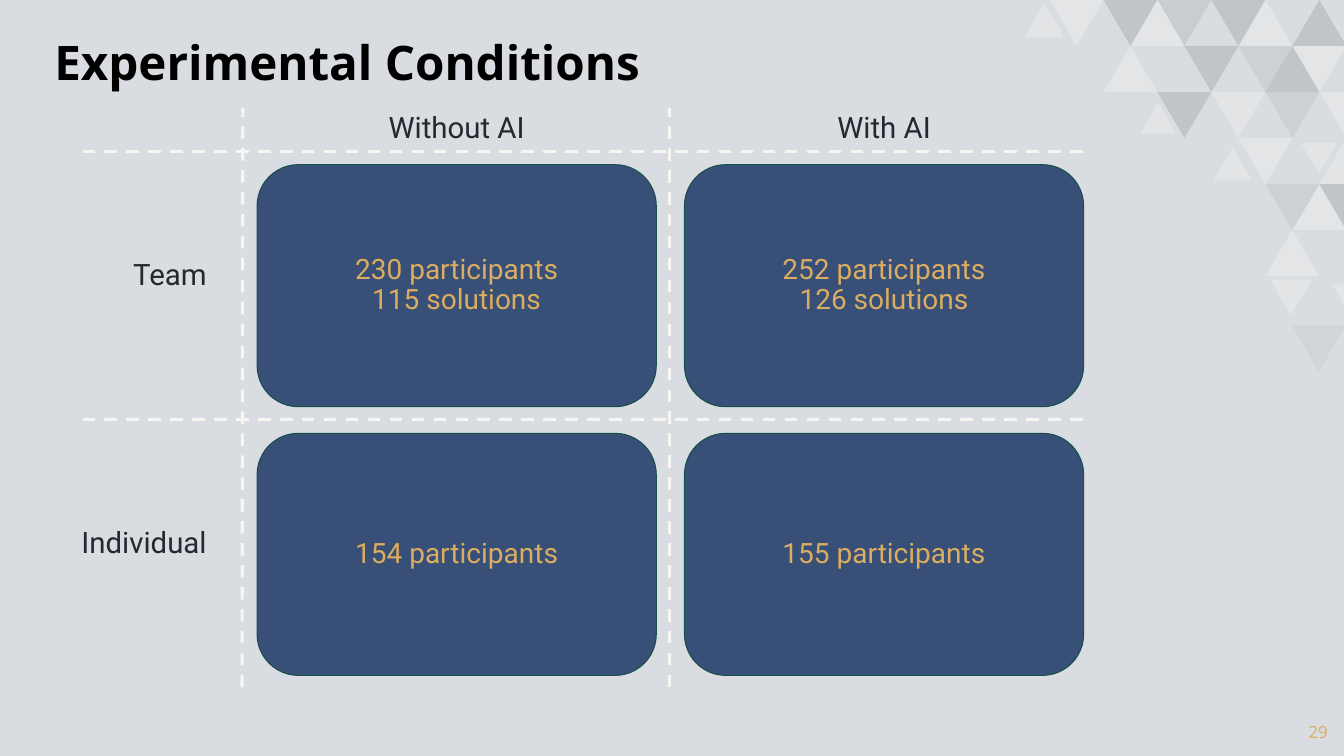
import pptx
import pptx.dml.color
import pptx.enum.dml
import pptx.enum.shapes
import pptx.enum.text
import pptx.oxml
import pptx.oxml.ns
import pptx.util

Cm = pptx.util.Cm
Align = pptx.enum.text.PP_ALIGN
Anchor = pptx.enum.text.MSO_ANCHOR


def color(value):
    return pptx.dml.color.RGBColor.from_string(value)


def write(shape, text, size, ink, align, font="Roboto", anchor=Anchor.TOP,
          spacing=0.9, left=0.25, side=0.25, edge=0.13):
    frame = shape.text_frame
    frame.word_wrap = True
    frame.vertical_anchor = anchor
    frame.margin_left, frame.margin_right = Cm(left), Cm(side)
    frame.margin_top = frame.margin_bottom = Cm(edge)
    frame.text = text
    for para in frame.paragraphs:
        para.alignment = align
        para.line_spacing = spacing
        para.font.name = font
        para.font.size = pptx.util.Pt(size)
        para.font.color.rgb = color(ink)


deck = pptx.Presentation()
deck.slide_width, deck.slide_height = Cm(33.87), Cm(19.05)
page = deck.slides.add_slide(deck.slide_layouts[6])
page.background.fill.solid()
page.background.fill.fore_color.rgb = color("D9DCE0")

PALE, DARK, SLATE = "F7F6F3", "303F48", "49636F"
GRID_LEFT, HALF, ROW = 26.45, 0.68, 1.16
grid_triangles = [
    (7, 1, "down", SLATE, 9), (7, 0, "up", PALE, 36), (5, 1, "down", DARK, 14),
    (6, 0, "down", DARK, 14), (4, 0, "down", DARK, 9), (2, 0, "down", DARK, 14),
    (0, 0, "down", PALE, 36), (3, 0, "up", PALE, 36), (10, 2, "down", PALE, 36),
    (9, 1, "down", PALE, 36), (9, 0, "up", DARK, 14), (8, 1, "up", DARK, 14),
    (9, 4, "up", PALE, 36), (8, 5, "up", PALE, 36), (10, 4, "down", DARK, 14),
    (8, 4, "down", SLATE, 9), (10, 3, "up", PALE, 32), (7, 3, "down", PALE, 36),
    (8, 2, "down", SLATE, 9), (6, 2, "down", PALE, 32), (4, 2, "down", DARK, 14),
    (2, 1, "up", PALE, 36),
]
loose_triangles = [
    (25.81, 0.08, 1.02, 0.86, "up", PALE, 32),
    (32.79, 3.61, 0.91, 0.76, "down", PALE, 32),
    (32, 7.04, 1.07, 0.91, "down", PALE, 32),
    (32.56, 8.2, 1.35, 1.17, "down", DARK, 4),
    (33.55, 7.14, 0.66, 0.56, "down", PALE, 32),
    (28.73, 2.57, 0.91, 0.79, "up", PALE, 32),
    (30.58, 3.71, 0.97, 0.84, "up", PALE, 32),
]
triangles = [(GRID_LEFT + column * HALF, row * ROW, 2 * HALF, ROW, *rest)
             for column, row, *rest in grid_triangles] + loose_triangles

for left, top, width, height, direction, tint, opacity in triangles:
    base, tip = (top + height, top) if direction == "up" else (top, top + height)
    builder = page.shapes.build_freeform(Cm(left), Cm(base))
    builder.add_line_segments([(Cm(left + width), Cm(base)),
                               (Cm(left + width / 2), Cm(tip))], close=True)
    triangle = builder.convert_to_shape()
    triangle.shadow.inherit = False
    triangle.line.fill.background()
    triangle.fill.solid()
    triangle.fill.fore_color.rgb = color(tint)
    tint_element = triangle.fill._xPr.find(".//" + pptx.oxml.ns.qn("a:srgbClr"))
    tint_element.append(pptx.oxml.parse_xml(
        f'<a:alpha {pptx.oxml.ns.nsdecls("a")} val="{opacity * 1000}"/>'))

number = page.shapes.add_textbox(Cm(26.09), Cm(17.93), Cm(7.62), Cm(1.02))
write(number, "29", 12, "DBAD60", Align.RIGHT, "Open Sans", Anchor.MIDDLE, spacing=1)

title = page.shapes.add_textbox(Cm(1.37), Cm(0.86), Cm(30.99), Cm(2.49))
write(title, "Experimental Conditions", 34, "000000", Align.LEFT, "Open Sans", left=0)
title.text_frame.paragraphs[0].font.bold = True

CARD_WIDTH, CARD_HEIGHT = 10.06, 6.1
columns = [("Without AI", 6.48), ("With AI", 17.25)]
rows = [
    ("Team", 4.15, 6.43, ["230 participants\n115 solutions",
                          "252 participants\n126 solutions"]),
    ("Individual", 10.92, 13.18, ["154 participants", "155 participants"]),
]
for heading, left in columns:
    box = page.shapes.add_textbox(Cm(left), Cm(2.72), Cm(CARD_WIDTH), Cm(1.52))
    write(box, heading, 21, "202A2F", Align.CENTER)

for label, top, label_top, counts in rows:
    box = page.shapes.add_textbox(Cm(0.81), Cm(label_top), Cm(4.65), Cm(1.6))
    write(box, label, 21, "202A2F", Align.RIGHT)
    for (heading, left), count in zip(columns, counts):
        card = page.shapes.add_shape(
            pptx.enum.shapes.MSO_SHAPE.ROUNDED_RECTANGLE,
            Cm(left), Cm(top), Cm(CARD_WIDTH), Cm(CARD_HEIGHT))
        card.shadow.inherit = False
        card.adjustments[0] = 0.17
        card.fill.solid()
        card.fill.fore_color.rgb = color("384F77")
        card.line.color.rgb = color("184F4C")
        card.line.width = pptx.util.Pt(0.75)
        write(card, count, 20, "DBAD60", Align.CENTER, anchor=Anchor.MIDDLE,
              left=0.13, side=0.13, edge=0.05)

dividers = [
    (27.28, 3.81, 1.93, 3.81), (6.1, 17.32, 6.12, 2.72),
    (27.28, 10.57, 1.93, 10.57), (16.87, 17.32, 16.87, 2.72),
]
for ends in dividers:
    divider = page.shapes.add_connector(
        pptx.enum.shapes.MSO_CONNECTOR.STRAIGHT, *[Cm(end) for end in ends])
    divider.line.color.rgb = color(PALE)
    divider.line.width = pptx.util.Pt(2.25)
    divider.line.dash_style = pptx.enum.dml.MSO_LINE.DASH
    divider._element.spPr.append(pptx.oxml.parse_xml(
        f'<a:effectLst {pptx.oxml.ns.nsdecls("a")}/>'))

deck.save("out.pptx")
